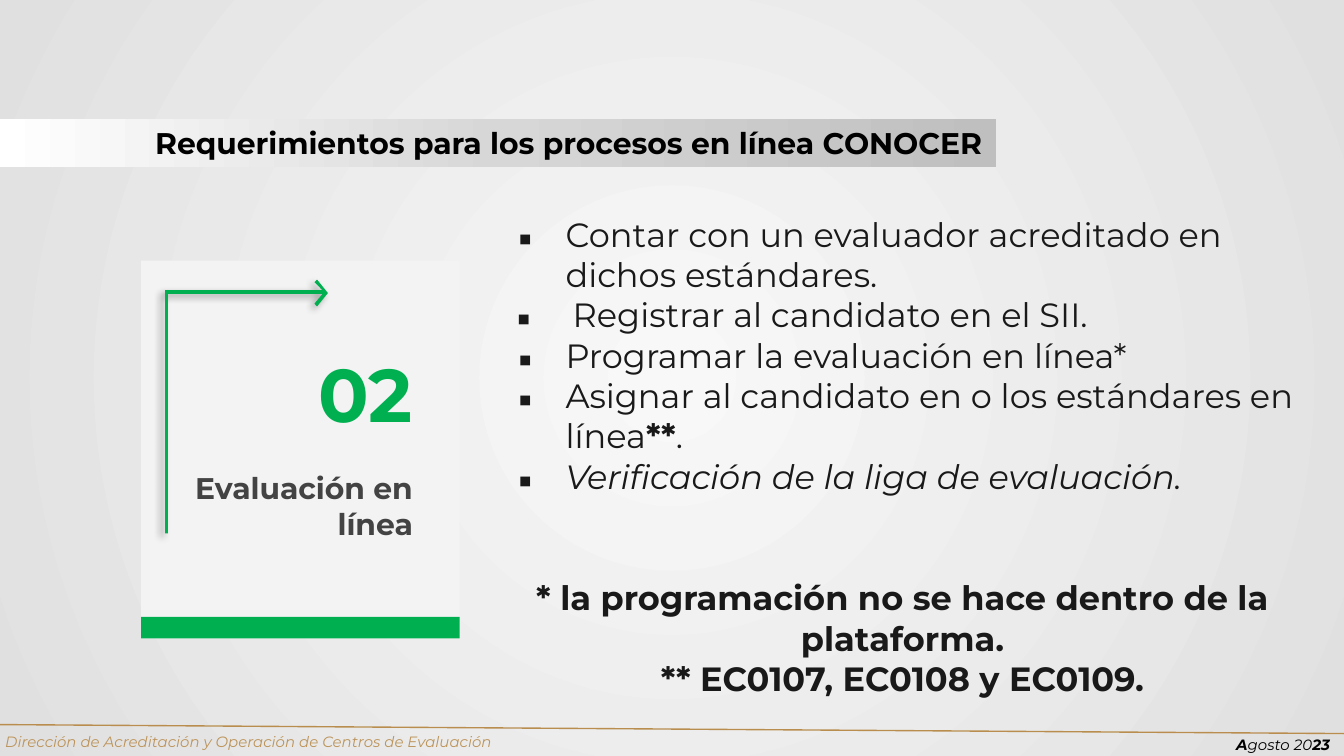
from dataclasses import dataclass

from lxml import etree
from pptx import Presentation
from pptx.dml.color import RGBColor
from pptx.enum.shapes import MSO_CONNECTOR, MSO_SHAPE
from pptx.enum.text import MSO_ANCHOR, PP_ALIGN
from pptx.oxml.ns import qn
from pptx.util import Pt

RECT = MSO_SHAPE.RECTANGLE
LINE = MSO_CONNECTOR.STRAIGHT
TOP, MIDDLE = MSO_ANCHOR.TOP, MSO_ANCHOR.MIDDLE
LEFT, CENTER, RIGHT = PP_ALIGN.LEFT, PP_ALIGN.CENTER, PP_ALIGN.RIGHT


@dataclass(frozen=True)
class Theme:
    font: str = "Montserrat"
    green: str = "00B050"
    gold: str = "BC945A"
    rule: str = "B88D4D"
    black: str = "000000"
    ink: str = "191919"
    gray: str = "434343"
    card: str = "F3F3F3"
    back: tuple = ((0, "F8F8F8"), (100, "E1E0E1"))
    band: tuple = ((0, "BFBFBF"), (50, "D7D7D7"), (100, "FFFFFF"))
    small: int = 8
    head: int = 16
    body: int = 18
    huge: int = 40


def add(parent, tag, **attrs):
    node = etree.SubElement(parent, qn(tag))
    for key, value in attrs.items():
        node.set(key, str(value))
    return node


class Deck:
    def __init__(self, slide, theme):
        self.slide = slide
        self.theme = theme
        self.shapes = slide.shapes

    def blend(self, fill, root, stops, angle=None):
        fill.gradient()
        grad = next(root.iter(qn("a:gradFill")))
        for child in list(grad):
            grad.remove(child)
        group = add(grad, "a:gsLst")
        for place, color in stops:
            add(add(group, "a:gs", pos=place * 1000), "a:srgbClr", val=color)
        if angle is None:
            ring = add(grad, "a:path", path="circle")
            add(ring, "a:fillToRect", l=50000, t=50000, r=50000, b=50000)
        else:
            add(grad, "a:lin", ang=angle * 60000, scaled=0)

    def backdrop(self):
        self.blend(self.slide.background.fill, self.slide.element, self.theme.back)

    def paint(self, shape, color):
        shape.shadow.inherit = False
        shape.line.fill.background()
        if color:
            shape.fill.solid()
            shape.fill.fore_color.rgb = RGBColor.from_string(color)
        return shape

    def rect(self, box, color=None):
        return self.paint(self.shapes.add_shape(RECT, *map(Pt, box)), color)

    def outline(self, points, color):
        spots = [(Pt(x), Pt(y)) for x, y in points]
        pen = self.shapes.build_freeform(*spots[0], scale=1.0)
        pen.add_line_segments(spots[1:], close=True)
        shape = self.paint(pen.convert_to_shape(), color)
        glow = add(next(shape.element.iter(qn("a:effectLst"))), "a:outerShdw",
                   blurRad=Pt(4), dist=Pt(3), dir=135 * 60000, algn="tr", rotWithShape=0)
        add(add(glow, "a:srgbClr", val=self.theme.black), "a:alpha", val=40000)

    def rule(self, start, end, color, width):
        line = self.shapes.add_connector(LINE, *map(Pt, (*start, *end)))
        line.line.color.rgb = RGBColor.from_string(color)
        line.line.width = Pt(width)
        add(line.element.spPr, "a:effectLst")

    def style(self, para, runs, size, color, align=LEFT):
        para.alignment = align
        for text, marks in runs:
            run = para.add_run()
            run.text = text
            font = run.font
            font.name, font.size = self.theme.font, Pt(size)
            font.color.rgb = RGBColor.from_string(color)
            font.bold, font.italic = "b" in marks, "i" in marks

    def text(self, box, runs, size, color, align=LEFT, anchor=TOP, inset=None, wrap=True):
        frame = self.shapes.add_textbox(*map(Pt, box)).text_frame
        frame.word_wrap = wrap
        frame.vertical_anchor = anchor
        if inset:
            frame.margin_left = frame.margin_right = Pt(inset)
            frame.margin_top = frame.margin_bottom = Pt(inset)
        self.style(frame.paragraphs[0], runs, size, color, align)
        return frame

    def bullet(self, para, left, hang):
        props = para._p.get_or_add_pPr()
        props.set("marL", str(Pt(left)))
        props.set("indent", str(Pt(-hang)))
        add(add(props, "a:buClr"), "a:srgbClr", val=self.theme.ink)
        add(props, "a:buFont", typeface="Noto Sans Symbols")
        add(props, "a:buChar", char="▪")

    def banner(self, box, text):
        shape = self.rect(box)
        self.blend(shape.fill, shape.element, self.theme.band, 180)
        frame = shape.text_frame
        frame.vertical_anchor = MIDDLE
        self.style(frame.paragraphs[0], [(text, "b")], self.theme.head,
                   self.theme.black, RIGHT)

    def card(self, number, label):
        look = self.theme
        self.shapes = self.slide.shapes.add_group_shape().shapes
        self.rect((75.6, 139.7, 170.7, 202.3), look.card)
        self.outline(ARROW, look.green)
        self.rect((75.6, 330.5, 170.7, 11.5), look.green)
        for top, text, size, color in ((241.9, label, look.head, look.gray),
                                       (181.4, number, look.huge, look.green)):
            self.text((92.9, top, 135.4, 57.6), [(text, "b")], size, color,
                      RIGHT, MIDDLE, 7.2)
        self.shapes = self.slide.shapes

    def steps(self, box, items, notes):
        look = self.theme
        frame = self.text(box, items[0][0], look.body, look.ink, inset=7.2)
        self.bullet(frame.paragraphs[0], *items[0][1])
        for runs, indent in items[1:]:
            para = frame.add_paragraph()
            self.bullet(para, *indent)
            self.style(para, runs, look.body, look.ink)
        for order, note in enumerate(notes):
            para = frame.add_paragraph()
            para.space_before = Pt(0 if order else 43.5)
            self.style(para, [(note, "b")], look.body, look.ink, CENTER)


ARROW = ((169.9, 149.8), (168.5, 151.2), (172.8, 155.5), (88.5, 155.5),
         (88.5, 285.8), (90, 285.8), (90, 157.5), (172.8, 157.5),
         (168.5, 162.7), (169.9, 164.2), (175.7, 157))
INDENT = (36, 25.2)
STEPS = (
    ([("Contar con un evaluador acreditado en dichos estándares.", "")], INDENT),
    ([("Registrar al candidato en el SII.", "")], (39.8, 29.7)),
    ([("Programar la evaluación en línea*", "")], INDENT),
    ([("Asignar al candidato en o los estándares en línea", ""),
      ("**", "b"), (".", "")], INDENT),
    ([("Verificación de la liga de evaluación.", "i")], INDENT),
)
NOTES = ("* la programación no se hace dentro de la plataforma.",
         "** EC0107, EC0108 y EC0109.")


def main():
    show = Presentation()
    show.slide_width, show.slide_height = Pt(720), Pt(405)
    look = Theme()
    deck = Deck(show.slides.add_slide(show.slide_layouts[6]), look)
    deck.backdrop()
    deck.text((-4.3, 388.8, 346.3, 17.3),
              [("Dirección de Acreditación y Operación de Centros de Evaluación", "i")],
              look.small, look.gold)
    deck.text((655.2, 390.5, 64.8, 17.3),
              [("A", "bi"), ("gosto 20", "i"), ("23", "bi")],
              look.small, look.black, wrap=False)
    deck.rule((0, 388.2), (720, 393), look.rule, 0.75)
    deck.banner((0, 63.6, 533.5, 25.7), "Requerimientos para los procesos en línea CONOCER")
    deck.card("02", "Evaluación en línea")
    deck.steps((259.9, 107.3, 447.1, 219.6), STEPS, NOTES)
    show.save("out.pptx")


if __name__ == "__main__":
    main()
